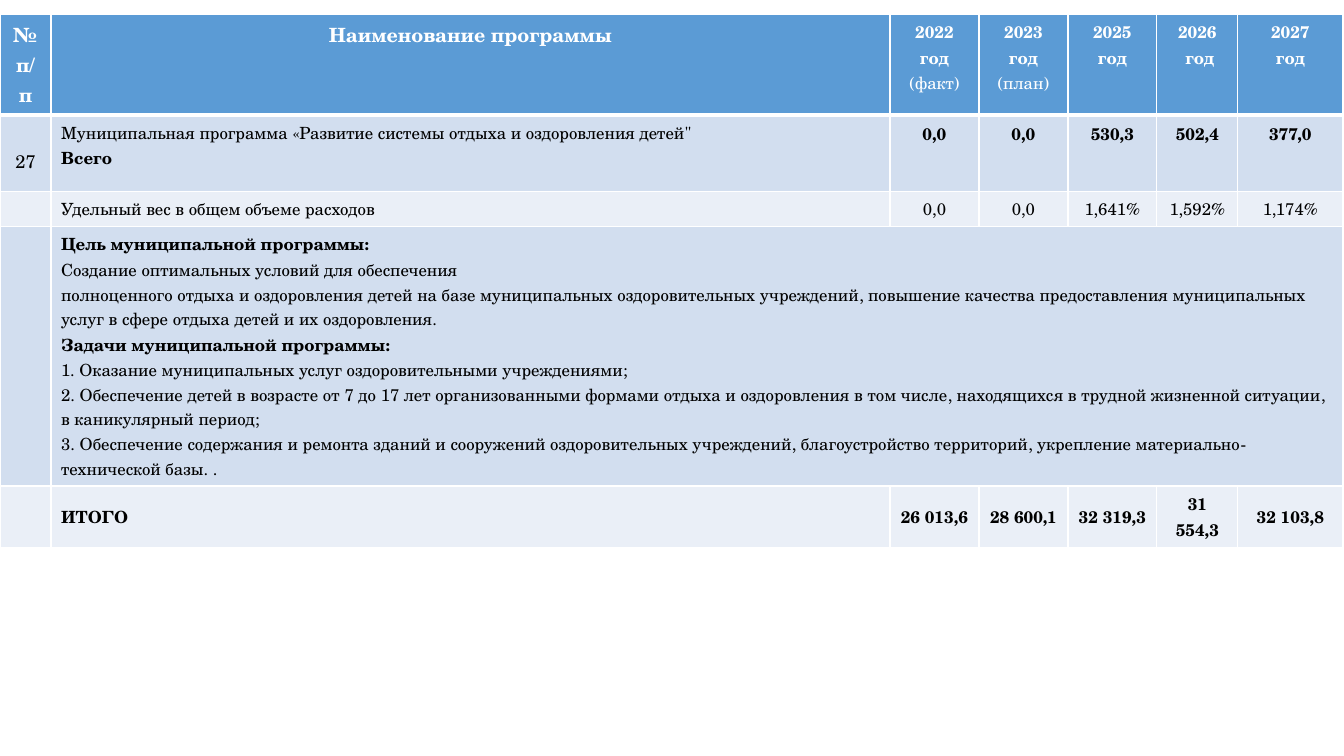
from lxml import etree
from pptx import Presentation
from pptx.dml.color import RGBColor
from pptx.enum.text import MSO_ANCHOR, PP_ALIGN
from pptx.oxml.ns import qn
from pptx.util import Emu, Pt

WHITE = RGBColor(0xFF, 0xFF, 0xFF)
BLACK = RGBColor(0x00, 0x00, 0x00)
HEADER_BLUE = RGBColor(0x5B, 0x9B, 0xD5)
BAND_DARK = RGBColor(0xD2, 0xDE, 0xEF)
BAND_LIGHT = RGBColor(0xEA, 0xEF, 0xF7)
LEFT, CENTER = PP_ALIGN.LEFT, PP_ALIGN.CENTER
TOP, MIDDLE = MSO_ANCHOR.TOP, MSO_ANCHOR.MIDDLE

COLUMN_WIDTHS = [51, 839, 89, 89, 89, 81, 105]
ROW_HEIGHTS = [88, 76, 35, 209, 44]
ROW_FILLS = [HEADER_BLUE, BAND_DARK, BAND_LIGHT, BAND_DARK, BAND_LIGHT]

YEARS = [
    [[("2022 год ", True), ("(факт)", False)]],
    [[("2023 год ", True), ("(план)", False)]],
    [[("2025", True)], [("год", True)]],
    [[("2026", True)], [(" год", True)]],
    [[("2027", True)], [("год", True)]],
]
PROGRAM = [
    [("Муниципальная программа «Развитие системы отдыха и оздоровления детей\"", False)],
    [("Всего", True)],
]
GOALS = [
    [("Цель муниципальной программы:", True)],
    [("Создание оптимальных условий для обеспечения", False)],
    [("полноценного отдыха и оздоровления детей на базе муниципальных оздоровительных учреждений, "
      "повышение качества предоставления муниципальных услуг в сфере отдыха детей и их оздоровления.", False)],
    [("Задачи муниципальной программы:", True)],
    [("1. Оказание муниципальных услуг оздоровительными учреждениями;", False)],
    [("2. Обеспечение детей в возрасте от 7 до 17 лет организованными формами отдыха и оздоровления "
      "в том числе, находящихся в трудной жизненной ситуации, в каникулярный период;", False)],
    [("3. Обеспечение содержания и ремонта зданий и сооружений оздоровительных учреждений, "
      "благоустройство территорий, укрепление материально-технической базы. .", False)],
]
VALUE_ROWS = [
    (1, ["0,0", "0,0", "530,3", "502,4", "377,0"], True, TOP),
    (2, ["0,0", "0,0", "1,641%", "1,592%", "1,174%"], False, MIDDLE),
    (4, ["26 013,6", "28 600,1", "32 319,3", "31 554,3", "32 103,8"], True, MIDDLE),
]


class SlideBuilder:
    font = "TeX Gyre Schola"
    scale = 914400 / 100.8

    def __init__(self, presentation):
        self.slide = presentation.slides.add_slide(presentation.slide_layouts[6])

    def px(self, length):
        return Emu(round(length * self.scale))

    def table(self, left, top, widths, heights, fills):
        frame = self.slide.shapes.add_table(
            len(heights), len(widths), self.px(left), self.px(top),
            self.px(sum(widths)), self.px(sum(heights)))
        table = frame.table
        table.horz_banding = False
        for column, width in zip(table.columns, widths):
            column.width = self.px(width)
        for index, (row, height, fill) in enumerate(zip(table.rows, heights, fills)):
            row.height = self.px(height)
            for cell in row.cells:
                cell.fill.solid()
                cell.fill.fore_color.rgb = fill
                self.borders(cell, 3 if index == 1 else 1, 3 if index == 0 else 1)
                end = etree.SubElement(cell.text_frame.paragraphs[0]._p, qn("a:endParaRPr"))
                end.set("sz", "1200")
        return table

    def borders(self, cell, top, bottom):
        properties = cell._tc.get_or_add_tcPr()
        sides = [("a:lnL", 1), ("a:lnR", 1), ("a:lnT", top), ("a:lnB", bottom)]
        for position, (tag, width) in enumerate(sides):
            line = etree.Element(qn(tag), w=str(Pt(width)))
            fill = etree.SubElement(line, qn("a:solidFill"))
            etree.SubElement(fill, qn("a:srgbClr"), val=str(WHITE))
            properties.insert(position, line)

    def cell_text(self, cell, paragraphs, size=12, color=BLACK, align=LEFT, anchor=TOP):
        cell.vertical_anchor = anchor
        text_frame = cell.text_frame
        text_frame.text = "\n".join("" for _ in paragraphs)
        for paragraph, pieces in zip(text_frame.paragraphs, paragraphs):
            paragraph.alignment = align
            for text, bold in pieces:
                run = paragraph.add_run()
                run.text = text
                run.font.name = self.font
                run.font.size = Pt(size)
                run.font.bold = bold
                run.font.color.rgb = color


def main():
    presentation = Presentation()
    presentation.slide_width = Emu(12192000)
    presentation.slide_height = Emu(6858000)
    builder = SlideBuilder(presentation)
    table = builder.table(0, 14, COLUMN_WIDTHS, ROW_HEIGHTS, ROW_FILLS)
    table.cell(3, 1).merge(table.cell(3, 6))

    for column, title in enumerate(["№ п/п", "Наименование программы"]):
        builder.cell_text(table.cell(0, column), [[(title, True)]], 14, WHITE, CENTER)
    for column, year in enumerate(YEARS, 2):
        builder.cell_text(table.cell(0, column), year, 12, WHITE, CENTER)

    number_cell = table.cell(1, 0)
    builder.cell_text(number_cell, [[("27", False)]], 13, align=CENTER)
    number_cell.margin_top = builder.px(33)

    builder.cell_text(table.cell(1, 1), PROGRAM)
    builder.cell_text(table.cell(2, 1), [[("Удельный вес в общем объеме расходов", False)]])
    builder.cell_text(table.cell(3, 1), GOALS)
    builder.cell_text(table.cell(4, 1), [[("ИТОГО", True)]], anchor=MIDDLE)

    for row, values, bold, anchor in VALUE_ROWS:
        for column, value in enumerate(values, 2):
            builder.cell_text(table.cell(row, column), [[(value, bold)]], align=CENTER, anchor=anchor)

    presentation.save("out.pptx")


if __name__ == "__main__":
    main()
